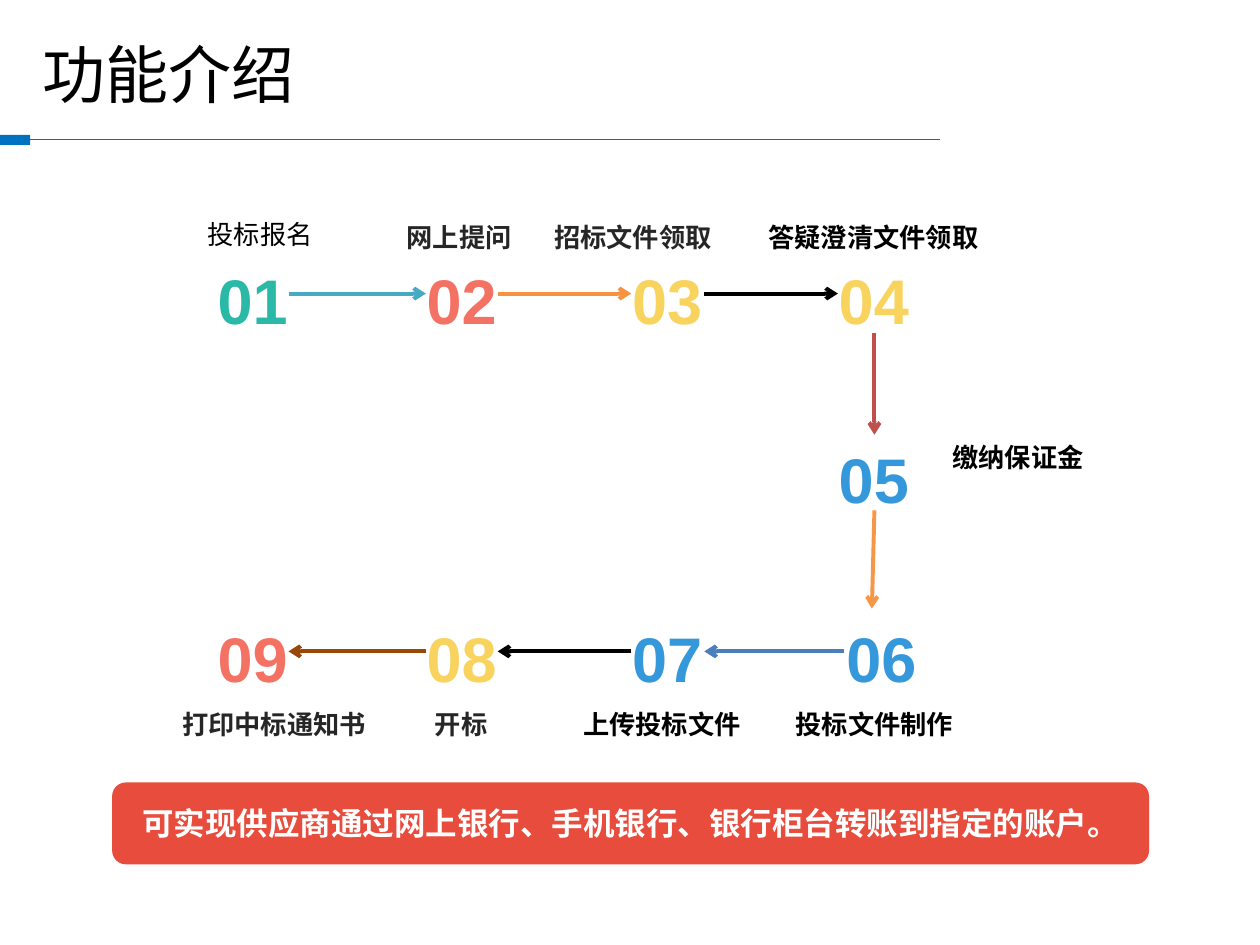
from typing import NamedTuple

from lxml import etree
from pptx import Presentation
from pptx import util as u
from pptx.dml.color import RGBColor
from pptx.enum import shapes, text
from pptx.oxml import ns

PX = 9144  # EMU per px, 100 px to the inch
CJK, LATIN = "Noto Sans CJK SC", "Arial"

BLACK = RGBColor(0x00, 0x00, 0x00)
DARK = RGBColor(0x26, 0x26, 0x26)
WHITE = RGBColor(0xFF, 0xFF, 0xFF)
ACCENT = RGBColor(0x00, 0x70, 0xC0)
BANNER = RGBColor(0xE7, 0x4C, 0x3C)
GREEN = RGBColor(0x29, 0xB9, 0xA6)
CORAL = RGBColor(0xF4, 0x72, 0x64)
YELLOW = RGBColor(0xF8, 0xD3, 0x5E)
BLUE = RGBColor(0x34, 0x98, 0xDB)
TEAL = RGBColor(0x46, 0xAA, 0xC5)
ORANGE = RGBColor(0xF6, 0x92, 0x40)
AMBER = RGBColor(0xF7, 0x96, 0x46)
RED = RGBColor(0xC0, 0x50, 0x4D)
STEEL = RGBColor(0x4B, 0x7E, 0xBC)
BROWN = RGBColor(0x98, 0x48, 0x07)

LEFT, CENTER = text.PP_ALIGN.LEFT, text.PP_ALIGN.CENTER
TOP_ROW, MIDDLE_ROW, BOTTOM_ROW = 203, 345, 487
TOP_LINE, BOTTOM_LINE = 233, 517
TOP_LABEL, BOTTOM_LABEL = 171, 557
NUMBER_WIDTH, NUMBER_HEIGHT, NUMBER_INSET = 57, 61, 5
LABEL_HEIGHT = 35


class Area(NamedTuple):
    left: int
    top: int
    width: int
    height: int


class Style(NamedTuple):
    size: int
    color: RGBColor
    bold: bool = True
    font: str = CJK
    align: text.PP_ALIGN = LEFT


class Step(NamedTuple):
    left: int
    top: int
    color: RGBColor
    label: str
    label_left: int
    label_top: int
    label_width: int
    label_color: RGBColor = BLACK
    label_bold: bool = True
    label_align: text.PP_ALIGN = LEFT


class Line(NamedTuple):
    x1: int
    y1: int
    x2: int
    y2: int
    color: RGBColor
    weight: float = 2.25
    arrow: bool = True


# Steps in reading order, numbered from 01
STEPS = [
    Step(172, TOP_ROW, GREEN, "投标报名", 155, 168, 125, label_bold=False),
    Step(338, TOP_ROW, CORAL, "网上提问", 313, TOP_LABEL, 106, DARK),
    Step(501, TOP_ROW, YELLOW, "招标文件领取", 430, TOP_LABEL, 170, DARK),
    Step(665, TOP_ROW, YELLOW, "答疑澄清文件领取", 600, TOP_LABEL, 199),
    Step(665, MIDDLE_ROW, BLUE, "缴纳保证金", 746, MIDDLE_ROW, 139),
    Step(671, BOTTOM_ROW, BLUE, "投标文件制作", 604, BOTTOM_LABEL, 180, label_align=CENTER),
    Step(501, BOTTOM_ROW, BLUE, "上传投标文件", 453, BOTTOM_LABEL, 154),
    Step(338, BOTTOM_ROW, YELLOW, "开标", 282, BOTTOM_LABEL, 168, DARK, label_align=CENTER),
    Step(172, BOTTOM_ROW, CORAL, "打印中标通知书", 129, BOTTOM_LABEL, 177, DARK,
         label_align=CENTER),
]

ARROWS = [
    Line(229, TOP_LINE, 338, TOP_LINE, TEAL),
    Line(395, TOP_LINE, 501, TOP_LINE, ORANGE),
    Line(559, TOP_LINE, 665, TOP_LINE, BLACK),
    Line(694, 264, 694, 345, RED),
    Line(694, 405, 692, 483, AMBER),
    Line(670, BOTTOM_LINE, 559, BOTTOM_LINE, STEEL),
    Line(501, BOTTOM_LINE, 395, BOTTOM_LINE, BLACK),
    Line(338, BOTTOM_LINE, 229, BOTTOM_LINE, BROWN),
]


def emu(area: Area) -> list[int]:
    return [length * PX for length in area]


def write(frame, words: str, style: Style) -> None:
    frame.word_wrap = True
    para = frame.paragraphs[0]
    para.alignment = style.align
    span = para.add_run()
    span.text = words
    span.font.size = u.Pt(style.size)
    span.font.bold = style.bold
    span.font.color.rgb = style.color
    span.font.name = style.font
    east_asian = etree.SubElement(span.font._element, ns.qn("a:ea"))
    east_asian.set("typeface", style.font)


def add_text(page, area: Area, words: str, style: Style):
    box = page.shapes.add_textbox(*emu(area))
    write(box.text_frame, words, style)
    return box.text_frame


def add_block(page, kind: shapes.MSO_SHAPE, area: Area, fill: RGBColor):
    block = page.shapes.add_shape(kind, *emu(area))
    block.shadow.inherit = False
    block.fill.solid()
    block.fill.fore_color.rgb = fill
    block.line.fill.background()
    return block


def add_line(page, line: Line) -> None:
    ends = [length * PX for length in line[:4]]
    connector = page.shapes.add_connector(shapes.MSO_CONNECTOR.STRAIGHT, *ends)
    connector.line.color.rgb = line.color
    connector.line.width = u.Pt(line.weight)
    if line.arrow:
        outline = connector.line._get_or_add_ln()
        etree.SubElement(outline, ns.qn("a:tailEnd")).set("type", "arrow")
    etree.SubElement(connector._element.spPr, ns.qn("a:effectLst"))


def add_step(page, number: int, step: Step) -> None:
    area = Area(step.left, step.top, NUMBER_WIDTH, NUMBER_HEIGHT)
    frame = add_text(page, area, f"{number:02d}", Style(36, step.color, True, LATIN, CENTER))
    frame.margin_left = frame.margin_right = frame.margin_bottom = 0
    frame.margin_top = NUMBER_INSET * PX
    label_area = Area(step.label_left, step.label_top, step.label_width, LABEL_HEIGHT)
    add_text(page, label_area, step.label,
             Style(15, step.label_color, step.label_bold, align=step.label_align))


def main() -> None:
    deck = Presentation()
    deck.slide_width, deck.slide_height = 1000 * PX, 750 * PX
    page = deck.slides.add_slide(deck.slide_layouts[6])

    # Title and its rule
    add_line(page, Line(746, 111, 20, 111, ACCENT, 0.75, False))
    add_block(page, shapes.MSO_SHAPE.RECTANGLE, Area(0, 107, 24, 8), ACCENT)
    title = add_text(page, Area(24, 21, 722, 75), "功能介绍", Style(36, BLACK, False))
    title.vertical_anchor = text.MSO_ANCHOR.MIDDLE

    # Process flow
    for number, step in enumerate(STEPS, start=1):
        add_step(page, number, step)
    for arrow in ARROWS:
        add_line(page, arrow)

    # Closing banner
    banner = add_block(page, shapes.MSO_SHAPE.ROUNDED_RECTANGLE, Area(89, 621, 823, 65), BANNER)
    banner.text_frame.vertical_anchor = text.MSO_ANCHOR.MIDDLE
    write(banner.text_frame, "可实现供应商通过网上银行、手机银行、银行柜台转账到指定的账户。",
          Style(18, WHITE, align=CENTER))

    deck.save("out.pptx")


if __name__ == "__main__":
    main()
